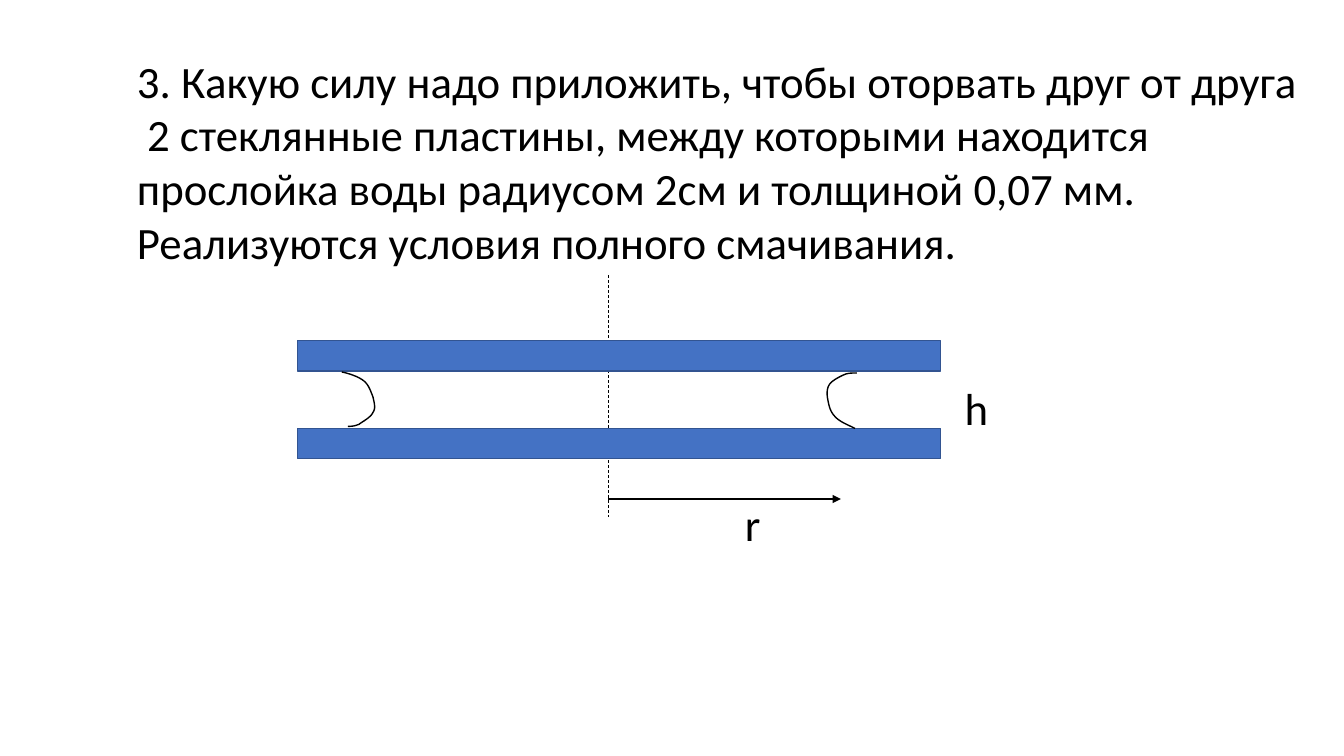
"""Build a slide with a physics problem on two glass plates held by a water layer."""
from dataclasses import dataclass
from typing import Optional

from lxml import etree
from pptx import Presentation
from pptx import util as u
from pptx.dml.color import RGBColor
from pptx.enum import dml, shapes
from pptx.oxml import ns

BLACK = RGBColor(0x00, 0x00, 0x00)
PLATE_FILL = RGBColor(0x44, 0x72, 0xC4)
PLATE_LINE = RGBColor(0x32, 0x54, 0x91)
FONT = "Calibri"
CURVE_STEPS = 10
Point = tuple[float, float]


@dataclass(frozen=True)
class Label:
    text: str
    left: float
    top: float
    width: float
    height: float


@dataclass(frozen=True)
class Line:
    start: Point
    end: Point
    weight: float
    dash: Optional[dml.MSO_LINE] = None
    arrow: bool = False


@dataclass(frozen=True)
class Meniscus:
    start: Point
    curves: tuple[tuple[Point, Point, Point], ...]


LABELS = (
    Label("3. Какую силу надо приложить, чтобы оторвать друг от друга  2 стеклянные пластины, "
          "между которыми находится прослойка воды радиусом 2см и толщиной 0,07 мм. "
          "Реализуются условия полного смачивания.", 1.26, 0.48, 11.79, 2.26),
    Label("r", 7.29, 4.88, 1.27, 0.64),
    Label("h", 9.47, 3.73, 0.86, 0.64),
)
AXIS = Line((6.03, 2.73), (6.03, 5.13), 0.5, dash=dml.MSO_LINE.DASH)
RADIUS = Line((6.03, 4.95), (8.34, 4.95), 1, arrow=True)
PLATE_TOPS = (3.38, 4.25)
MENISCI = (
    Meniscus((3.39, 3.69), (
        ((3.48, 3.71), (3.56, 3.74), (3.61, 3.78)),
        ((3.66, 3.82), (3.68, 3.89), (3.70, 3.94)),
        ((3.71, 3.99), (3.73, 4.05), (3.70, 4.09)),
        ((3.68, 4.14), (3.60, 4.18), (3.56, 4.21)),
        ((3.51, 4.23), (3.48, 4.23), (3.45, 4.23)),
    )),
    Meniscus((8.48, 4.25), (
        ((8.40, 4.21), (8.32, 4.18), (8.28, 4.13)),
        ((8.23, 4.08), (8.22, 4.01), (8.21, 3.96)),
        ((8.20, 3.91), (8.20, 3.85), (8.23, 3.81)),
        ((8.26, 3.77), (8.34, 3.73), (8.39, 3.71)),
        ((8.43, 3.70), (8.47, 3.70), (8.50, 3.70)),
    )),
)


def add_label(s, label: Label) -> None:
    """Draw wrapped text in the slide's single text style."""
    box = s.shapes.add_textbox(*map(u.Inches, (label.left, label.top, label.width, label.height)))
    tf = box.text_frame
    tf.word_wrap = True
    p = tf.paragraphs[0]
    p.text = label.text
    p.font.name = FONT
    p.font.size = u.Pt(32)
    p.font.color.rgb = BLACK


def add_line(s, line: Line) -> None:
    """Draw a straight line with an optional dash and arrowhead."""
    sp = s.shapes.add_connector(shapes.MSO_CONNECTOR.STRAIGHT,
                                *map(u.Inches, line.start + line.end))
    sp.line.color.rgb = BLACK
    sp.line.width = u.Pt(line.weight)
    if line.dash is not None:
        sp.line.dash_style = line.dash
    if line.arrow:
        etree.SubElement(sp.line._get_or_add_ln(), ns.qn("a:tailEnd"), type="triangle")
    etree.SubElement(sp._element.spPr, ns.qn("a:effectLst"))


def add_plate(s, top: float) -> None:
    """Draw one glass plate."""
    sp = s.shapes.add_shape(shapes.MSO_SHAPE.RECTANGLE, *map(u.Inches, (2.95, top, 6.38, 0.3)))
    sp.shadow.inherit = False
    sp.fill.solid()
    sp.fill.fore_color.rgb = PLATE_FILL
    sp.line.color.rgb = PLATE_LINE
    sp.line.width = u.Pt(1)


def bezier(points: tuple[Point, ...], t: float) -> Point:
    """Return the point at parameter t of a cubic curve."""
    weights = ((1 - t) ** 3, 3 * t * (1 - t) ** 2, 3 * t ** 2 * (1 - t), t ** 3)
    x, y = (sum(w * c for w, c in zip(weights, axis)) for axis in zip(*points))
    return x, y


def add_meniscus(s, meniscus: Meniscus) -> None:
    """Draw the curved edge of the water as an open outline."""
    start = meniscus.start
    vertices = []
    for curve in meniscus.curves:
        vertices += [bezier((start, *curve), i / CURVE_STEPS) for i in range(1, CURVE_STEPS + 1)]
        start = curve[-1]
    builder = s.shapes.build_freeform(*map(u.Inches, meniscus.start))
    builder.add_line_segments([(u.Inches(x), u.Inches(y)) for x, y in vertices], close=False)
    sp = builder.convert_to_shape()
    sp.shadow.inherit = False
    sp.fill.background()
    sp.line.color.rgb = BLACK
    sp.line.width = u.Pt(1)


def main() -> None:
    """Assemble and save the slide."""
    prs = Presentation()
    prs.slide_width, prs.slide_height = u.Inches(13.33), u.Inches(7.5)
    s = prs.slides.add_slide(prs.slide_layouts[6])
    problem, *marks = LABELS
    add_label(s, problem)
    add_line(s, AXIS)
    for top in PLATE_TOPS:
        add_plate(s, top)
    for meniscus in MENISCI:
        add_meniscus(s, meniscus)
    add_line(s, RADIUS)
    for mark in marks:
        add_label(s, mark)
    prs.save("out.pptx")


if __name__ == "__main__":
    main()
